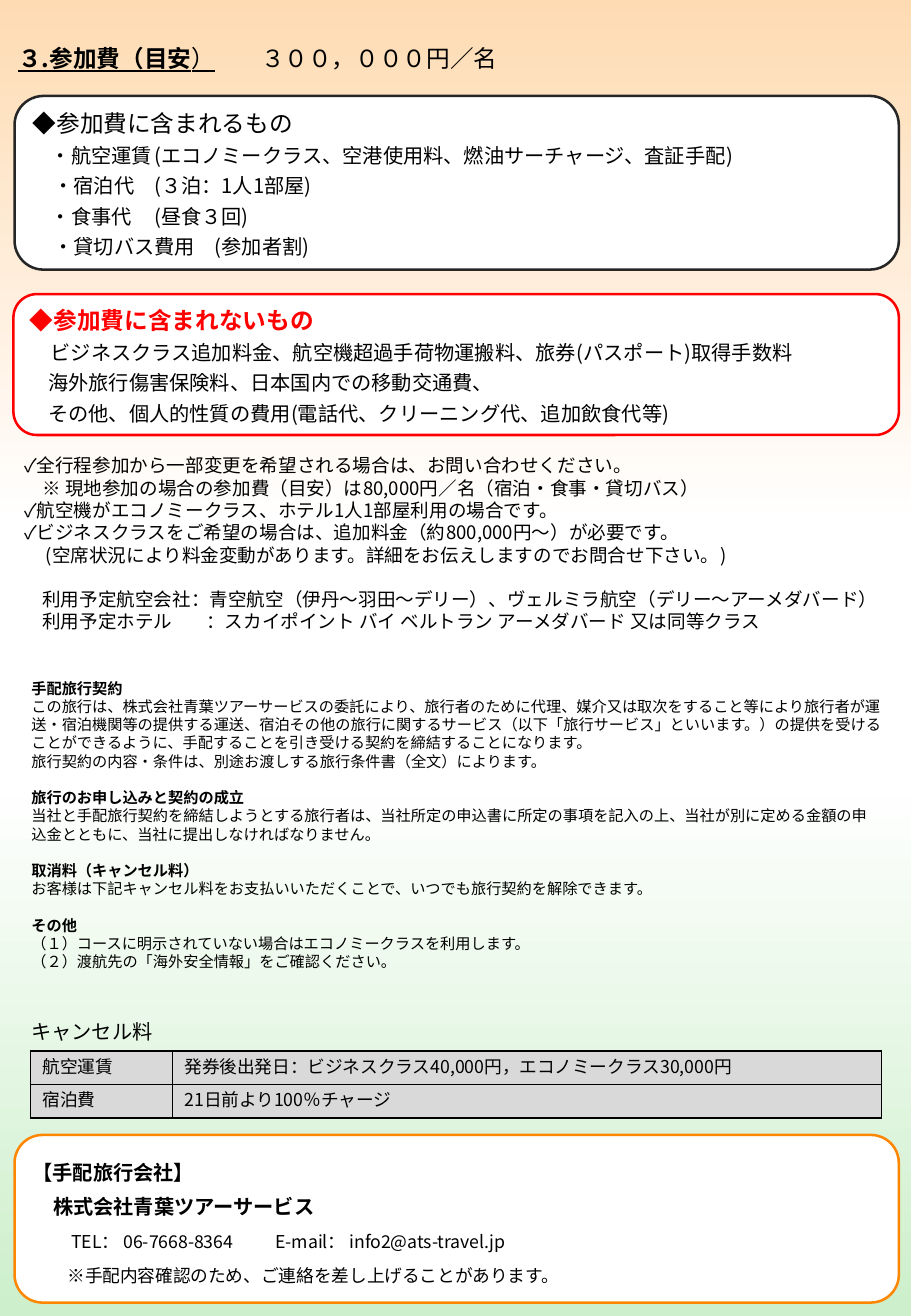
import lxml.etree
import pptx
import pptx.dml.color
import pptx.enum.shapes
import pptx.enum.text
import pptx.oxml.ns
import pptx.util

FONT = "Noto Sans CJK JP"
BLACK, RED, WHITE, GREY = "000000", "FF0000", "FFFFFF", "D9D9D9"
qn = pptx.oxml.ns.qn

deck = pptx.Presentation()
deck.slide_width = pptx.util.Inches(7.5)
deck.slide_height = pptx.util.Inches(10.83)
page = deck.slides.add_slide(deck.slide_layouts[6])
column, row = deck.slide_width / 100, deck.slide_height / 100


def paint(fill, colour):
    fill.solid()
    fill.fore_color.rgb = pptx.dml.color.RGBColor.from_string(colour)


def write(frame, lines, pitch, size):
    """Each line is a layout (indent and tab in inches, before in points), then its spans."""
    frame.word_wrap = True
    for number, (layout, *spans) in enumerate(lines):
        para = frame.add_paragraph() if number else frame.paragraphs[0]
        para.alignment = pptx.enum.text.PP_ALIGN.LEFT
        para.line_spacing = pptx.util.Pt(pitch)
        para.space_before = pptx.util.Pt(layout.get("before", 0))
        settings = para._p.get_or_add_pPr()
        settings.set("indent", str(pptx.util.Inches(layout.get("indent", 0))))
        if "tab" in layout:
            stops = lxml.etree.SubElement(settings, qn("a:tabLst"))
            position = str(pptx.util.Inches(layout["tab"]))
            lxml.etree.SubElement(stops, qn("a:tab"), pos=position, algn="l")
        for text, looks in spans:
            span = para.add_run()
            span.text = text
            values = {"name": FONT, "size": size, "bold": False, **looks}
            colour = values.pop("colour", BLACK)
            values["size"] = pptx.util.Pt(values["size"])
            for name, value in values.items():
                setattr(span.font, name, value)
            paint(span.font.fill, colour)
            lxml.etree.SubElement(span.font._element, qn("a:ea"), typeface=FONT)


# Background
backdrop = page.background.fill
backdrop.gradient()
backdrop.gradient_angle = 270
stops = page.element.xpath(".//a:gsLst")[0]
for stop in list(stops):
    stops.remove(stop)
for percent, colour in [(0, "FEDBB3"), (40, WHITE), (59, WHITE), (100, "CDEFCB")]:
    stop = lxml.etree.SubElement(stops, qn("a:gs"), pos=str(percent * 1000))
    lxml.etree.SubElement(stop, qn("a:srgbClr"), val=colour)

# Plain text: place in columns and rows, line pitch, size, lines
strong = {"bold": True}
heading = {"bold": True, "underline": True}
section = {"before": 10.8}
texts = [
    ((0.67, 2.86, 98, 3.14), 16.8, 14, [
        ({"tab": 2.49}, ("３.参加費（目安", heading), ("）", {"underline": True}),
         ("\t３００，０００円／名", {})),
    ]),
    ((2.13, 77.01, 19.6, 2.77), 14.4, 12, [({}, ("キャンセル料", {}))]),
    ((1.33, 34.07, 97.33, 14.59), 13.2, 11, [
        ({}, ("✓全行程参加から一部変更を希望される場合は、お問い合わせください。", {})),
        ({"indent": 0.15}, ("※ 現地参加の場合の参加費（目安）は80,000円／名（宿泊・食事・貸切バス）", {})),
        ({}, ("✓航空機がエコノミークラス、ホテル1人1部屋利用の場合です。", {})),
        ({}, ("✓ビジネスクラスをご希望の場合は、追加料金（約800,000円～）が必要です。", {})),
        ({"indent": 0.18}, ("(空席状況により料金変動があります。詳細をお伝えしますのでお問合せ下さい。)", {})),
        ({"indent": 0.15, "before": 13.2},
         ("利用予定航空会社：青空航空（伊丹～羽田～デリー）、ヴェルミラ航空（デリー～アーメダバード）", {})),
        ({"indent": 0.15, "tab": 1.37},
         ("利用予定ホテル\t：スカイポイント バイ ベルトラン アーメダバード 又は同等クラス", {})),
    ]),
    ((2.13, 51.15, 95.87, 23.27), 10.8, 9, [
        ({}, ("手配旅行契約", strong)),
        ({}, ("この旅行は、株式会社青葉ツアーサービスの委託により、旅行者のために代理、媒介又は取次を"
              "すること等により旅行者が運送・宿泊機関等の提供する運送、宿泊その他の旅行に関するサービス"
              "（以下「旅行サービス」といいます。）の提供を受けることができるように、手配することを"
              "引き受ける契約を締結することになります。", {})),
        ({}, ("旅行契約の内容・条件は、別途お渡しする旅行条件書（全文）によります。", {})),
        (section, ("旅行のお申し込みと契約の成立", strong)),
        ({}, ("当社と手配旅行契約を締結しようとする旅行者は、当社所定の申込書に所定の事項を記入の上、"
              "当社が別に定める金額の申込金とともに、当社に提出しなければなりません。", {})),
        (section, ("取消料（キャンセル料）", strong)),
        ({}, ("お客様は下記キャンセル料をお支払いいただくことで、いつでも旅行契約を解除できます。", {})),
        (section, ("その他", strong)),
        ({}, ("（１）コースに明示されていない場合はエコノミークラスを利用します。", {})),
        ({}, ("（２）渡航先の「海外安全情報」をご確認ください。", {})),
    ]),
]
for (left, top, width, height), pitch, size, lines in texts:
    box = page.shapes.add_textbox(*map(int, (left * column, top * row, width * column, height * row)))
    write(box.text_frame, lines, pitch, size)

# Rounded panels: place, outline, line pitch, size, lines
small = {"size": 10.5}
panels = [
    ((1.6, 7.29, 97.07, 13.2), "262626", 18, 12, [
        ({}, ("◆参加費に含まれるもの", {"size": 14})),
        ({"indent": 0.15, "tab": 1.18},
         ("・航空運賃\t(エコノミークラス、空港使用料、燃油サーチャージ、査証手配)", {})),
        ({"indent": 0.17, "tab": 1.2}, ("・宿泊代\t(３泊：1人1部屋)", {})),
        ({"indent": 0.15, "tab": 1.18}, ("・食事代\t(昼食３回)", {})),
        ({"indent": 0.17, "tab": 1.54}, ("・貸切バス費用\t(参加者割)", {})),
    ]),
    ((1.47, 22.35, 97.2, 10.71), RED, 18, 12, [
        ({}, ("◆参加費に含まれないもの", {"size": 14, "bold": True, "colour": RED})),
        ({"indent": 0.17},
         ("ビジネスクラス追加料金、航空機超過手荷物運搬料、旅券(パスポート)取得手数料", {})),
        ({"indent": 0.15}, ("海外旅行傷害保険料、日本国内での移動交通費、", {})),
        ({"indent": 0.15}, ("その他、個人的性質の費用(電話代、クリーニング代、追加飲食代等)", {})),
    ]),
    ((1.6, 86.24, 97.07, 12.74), "FD8603", 20, 12, [
        ({}, ("【手配旅行会社】", strong)),
        ({"indent": 0.17}, ("株式会社青葉ツアーサービス", strong)),
        ({"indent": 0.32, "tab": 1.98},
         ("TEL： 06-7668-8364\tE-mail： info2@ats-travel.jp", small)),
        ({"indent": 0.29}, ("※手配内容確認のため、ご連絡を差し上げることがあります。", small)),
    ]),
]
margins = {"margin_left": 0.08, "margin_right": 0.08, "margin_top": 0.01, "margin_bottom": 0.01}
for (left, top, width, height), outline, pitch, size, lines in panels:
    panel = page.shapes.add_shape(
        pptx.enum.shapes.MSO_SHAPE.ROUNDED_RECTANGLE,
        *map(int, (left * column, top * row, width * column, height * row)))
    panel.shadow.inherit = False
    paint(panel.fill, WHITE)
    paint(panel.line.fill, outline)
    panel.line.width = pptx.util.Pt(1.5)
    for name, value in margins.items():
        setattr(panel.text_frame, name, pptx.util.Inches(value))
    panel.text_frame.vertical_anchor = pptx.enum.text.MSO_ANCHOR.MIDDLE
    write(panel.text_frame, lines, pitch, size)

# Cancellation fees
fees = [
    ("航空運賃", "発券後出発日：ビジネスクラス40,000円，エコノミークラス30,000円"),
    ("宿泊費", "21日前より100％チャージ"),
]
fee_widths, fee_height = (15.6, 77.87), 2.54
table = page.shapes.add_table(len(fees), len(fee_widths), *map(int, (
    3.33 * column, 79.87 * row, sum(fee_widths) * column, len(fees) * fee_height * row))).table
for table_column, width in zip(table.columns, fee_widths):
    table_column.width = int(width * column)
for table_row, fee in zip(table.rows, fees):
    table_row.height = int(fee_height * row)
    for cell, text in zip(table_row.cells, fee):
        write(cell.text_frame, [({}, (text, {}))], 12.6, 10.5)
        borders = cell._tc.get_or_add_tcPr()
        for side in ("a:lnL", "a:lnR", "a:lnT", "a:lnB"):
            border = lxml.etree.SubElement(borders, qn(side), w=str(pptx.util.Pt(1)))
            ink = lxml.etree.SubElement(border, qn("a:solidFill"))
            lxml.etree.SubElement(ink, qn("a:srgbClr"), val=BLACK)
        paint(cell.fill, GREY)

deck.save("out.pptx")
